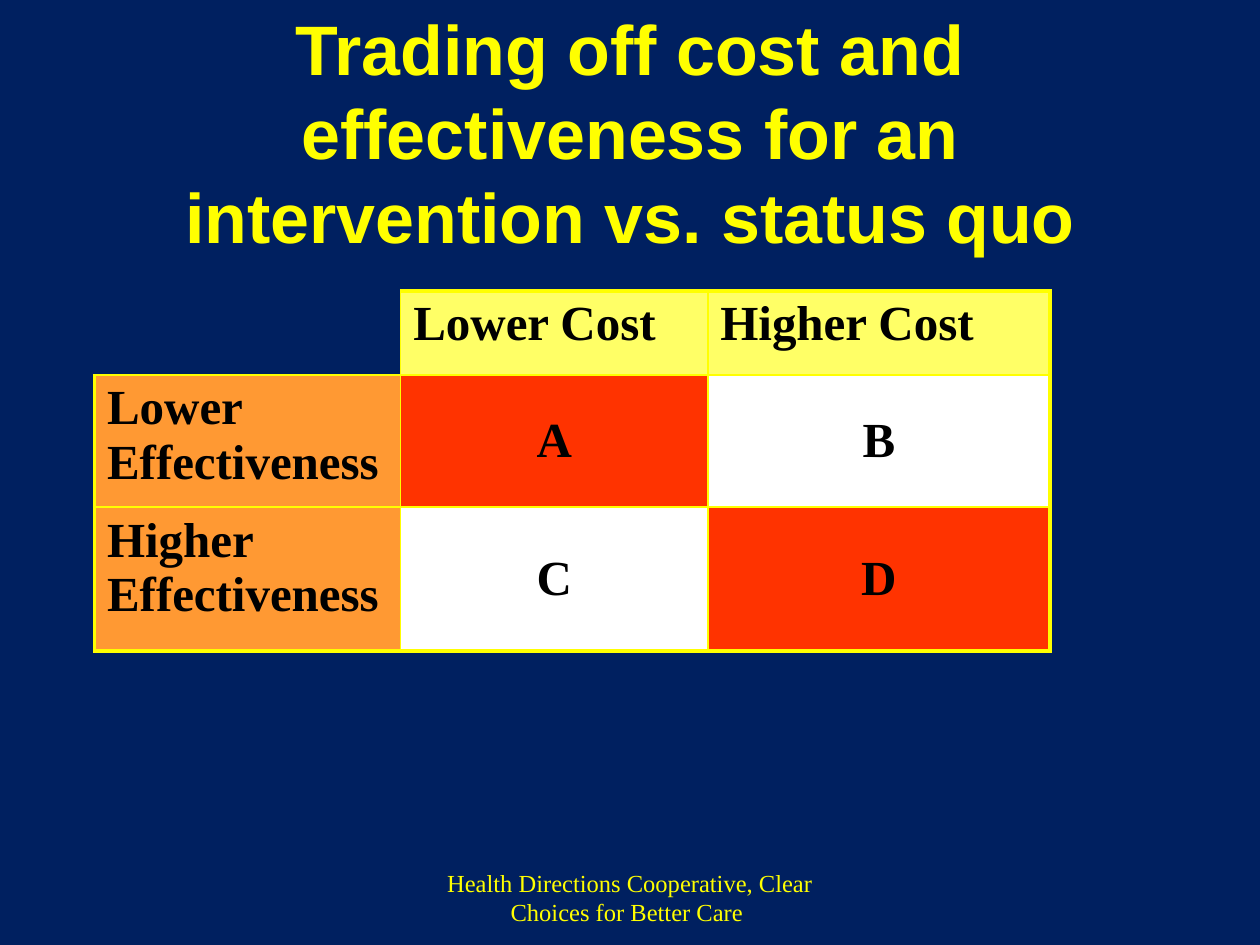
"""Build a slide with a two-by-two grid of cost against effectiveness."""
from lxml import etree
from pptx import Presentation
from pptx.dml.color import RGBColor
from pptx.enum.text import MSO_ANCHOR, PP_ALIGN
from pptx.oxml.ns import qn
from pptx.util import Pt

CENTER, LEFT = PP_ALIGN.CENTER, PP_ALIGN.LEFT
TOP, MIDDLE = MSO_ANCHOR.TOP, MSO_ANCHOR.MIDDLE

THEME = {
    "background": "002060", "yellow": "FFFF00", "black": "000000",
    "cost": "FFFF66", "effectiveness": "FF9933", "clear": "FF3300", "tradeoff": "FFFFFF",
    "heading_font": "Arial", "body_font": "Times New Roman",
    "title_size": 40, "table_size": 28, "footer_size": 14,
    "outer_line": 2.25, "inner_line": 1,
}


def write_text(frame, text, alignment, font_name, size, color, bold):
    paragraph = frame.paragraphs[0]
    paragraph.alignment = alignment
    run = paragraph.add_run()
    run.text = text
    values = {"name": THEME[font_name], "size": Pt(THEME[size]), "bold": bold}
    for name, value in values.items():
        setattr(run.font, name, value)
    run.font.color.rgb = RGBColor.from_string(THEME[color])
    return paragraph


def add_border(cell, edge, width):
    properties = cell._tc.get_or_add_tcPr()
    line = etree.SubElement(properties, qn(f"a:ln{edge}"), w=str(Pt(width)))
    if width:
        fill = etree.SubElement(line, qn("a:solidFill"))
        etree.SubElement(fill, qn("a:srgbClr"), val=THEME["yellow"])
    else:
        etree.SubElement(line, qn("a:noFill"))


presentation = Presentation()
presentation.slide_width, presentation.slide_height = Pt(720), Pt(540)
slide = presentation.slides.add_slide(presentation.slide_layouts[6])
slide.background.fill.solid()
slide.background.fill.fore_color.rgb = RGBColor.from_string(THEME["background"])

text_boxes = [
    ("Trading off cost and effectiveness for an intervention vs. status quo",
     (54, 30.24, 612, 90), MIDDLE, "heading_font", "title_size", True, 48),
    ("Health Directions Cooperative, Clear Choices for Better Care ",
     (246, 492, 228, 36), TOP, "body_font", "footer_size", False, 17),
]
for text, box, anchor, font_name, size, bold, spacing in text_boxes:
    frame = slide.shapes.add_textbox(*map(Pt, box)).text_frame
    frame.word_wrap = True
    frame.vertical_anchor = anchor
    paragraph = write_text(frame, text, CENTER, font_name, size, "yellow", bold)
    paragraph.line_spacing = Pt(spacing)

column_widths = [175, 175.5, 195.5]
row_heights = [48, 75.5, 82.25]
grid = [
    [("", None), ("Lower Cost", "cost"), ("Higher Cost", "cost")],
    [("Lower Effectiveness", "effectiveness"), ("A", "clear"), ("B", "tradeoff")],
    [("Higher Effectiveness", "effectiveness"), ("C", "tradeoff"), ("D", "clear")],
]
table = slide.shapes.add_table(
    3, 3, Pt(54), Pt(166.25), Pt(sum(column_widths)), Pt(sum(row_heights))).table
table.first_row = table.horz_banding = False
for column, width in zip(table.columns, column_widths):
    column.width = Pt(width)
for row, height in zip(table.rows, row_heights):
    row.height = Pt(height)

for row_index, entries in enumerate(grid):
    for column_index, (text, fill) in enumerate(entries):
        cell = table.cell(row_index, column_index)
        corner = row_index == column_index == 0
        outer_edges = {"L": column_index == 0, "R": column_index == 2,
                       "T": row_index == 0, "B": row_index == 2}
        for edge, outer in outer_edges.items():
            width = THEME["outer_line" if outer else "inner_line"]
            add_border(cell, edge, 0 if corner and outer else width)
        if corner:
            cell.fill.background()
            continue
        cell.fill.solid()
        cell.fill.fore_color.rgb = RGBColor.from_string(THEME[fill])
        inside = row_index > 0 and column_index > 0
        cell.vertical_anchor = MIDDLE if inside else TOP
        write_text(cell.text_frame, text, CENTER if inside else LEFT,
                   "body_font", "table_size", "black", True)

presentation.save("out.pptx")
